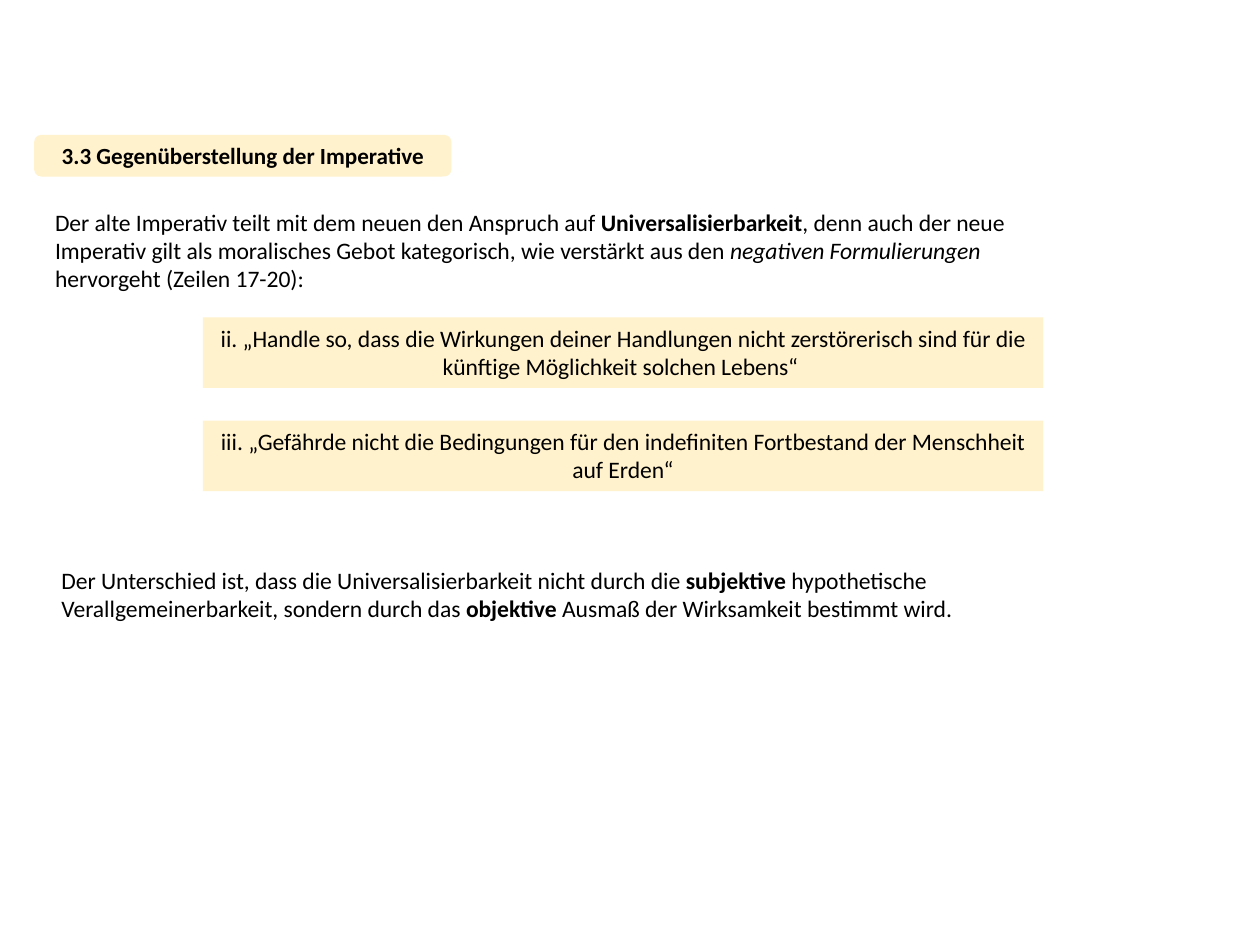
import pptx
import pptx.util
import pptx.dml.color
import pptx.enum.shapes
import pptx.enum.text

Cm, Pt = pptx.util.Cm, pptx.util.Pt
SHAPE = pptx.enum.shapes.MSO_SHAPE
ALIGN = pptx.enum.text.PP_ALIGN
ANCHOR = pptx.enum.text.MSO_ANCHOR

COLORS = {"text": "000000", "panel": "FFF2CC"}
BOLD, ITALIC = {"bold": True}, {"italic": True}


def rgb(name):
    return pptx.dml.color.RGBColor.from_string(COLORS[name])


def write(sp, runs, size=13.5, align=ALIGN.LEFT, frame=None, spacing=None):
    """Fill a shape with one paragraph of (text, format) runs."""
    tf = sp.text_frame
    settings = {"word_wrap": True, "vertical_anchor": ANCHOR.TOP, **(frame or {})}
    for name, value in settings.items():
        setattr(tf, name, value)
    p = tf.paragraphs[0]
    p.alignment = align
    if spacing:
        p.line_spacing = spacing
    for text, extra in runs:
        r = p.add_run()
        r.text = text
        for name, value in {"name": "Calibri", "size": Pt(size), **extra}.items():
            setattr(r.font, name, value)
        r.font.color.rgb = rgb("text")


def add_panel(s, kind, left, top, width, height):
    sp = s.shapes.add_shape(kind, Cm(left), Cm(top), Cm(width), Cm(height))
    sp.shadow.inherit = False
    sp.fill.solid()
    sp.fill.fore_color.rgb = rgb("panel")
    sp.line.fill.background()
    return sp


def add_heading(s, text):
    sp = add_panel(s, SHAPE.ROUNDED_RECTANGLE, 0.69, 2.72, 8.41, 0.84)
    frame = {"vertical_anchor": ANCHOR.BOTTOM,
             "margin_left": Cm(0.18), "margin_right": Cm(0.18),
             "margin_top": Cm(0.1), "margin_bottom": Cm(0.1)}
    write(sp, [(text, BOLD)], 13.2, ALIGN.CENTER, frame, 0.9)


def add_quote(s, top, text):
    sp = add_panel(s, SHAPE.RECTANGLE, 4.09, top, 16.94, 1.42)
    write(sp, [(text, {})], align=ALIGN.CENTER)


def add_body(s, left, top, width, height, runs):
    sp = s.shapes.add_textbox(Cm(left), Cm(top), Cm(width), Cm(height))
    write(sp, runs)


def main():
    prs = pptx.Presentation()
    prs.slide_width, prs.slide_height = Cm(25.4), Cm(19.05)
    s = prs.slides.add_slide(prs.slide_layouts[6])

    # Heading and introduction
    add_heading(s, "3.3 Gegenüberstellung der Imperative")
    add_body(s, 0.86, 4.06, 21.36, 1.98, [
        ("Der alte Imperativ teilt mit dem neuen den Anspruch auf ", {}),
        ("Universalisierbarkeit", BOLD),
        (", denn auch der neue Imperativ gilt als moralisches Gebot "
         "kategorisch, wie verstärkt aus den ", {}),
        ("negativen Formulierungen ", ITALIC),
        ("hervorgeht (Zeilen 17-20):", {}),
    ])

    # Quoted imperatives
    quotes = [
        "ii. „Handle so, dass die Wirkungen deiner Handlungen nicht "
        "zerstörerisch sind für die künftige Möglichkeit solchen Lebens“ ",
        "iii. „Gefährde nicht die Bedingungen für den indefiniten "
        "Fortbestand der Menschheit auf Erden“",
    ]
    for i, quote in enumerate(quotes):
        add_quote(s, 6.4 + i * 2.08, quote)

    # Conclusion
    add_body(s, 0.99, 11.28, 21.95, 1.42, [
        ("Der Unterschied ist, dass die Universalisierbarkeit nicht durch die ", {}),
        ("subjektive", BOLD),
        (" hypothetische Verallgemeinerbarkeit, sondern durch das ", {}),
        ("objektive", BOLD),
        (" Ausmaß der Wirksamkeit bestimmt wird.", {}),
    ])

    prs.save("out.pptx")


if __name__ == "__main__":
    main()
